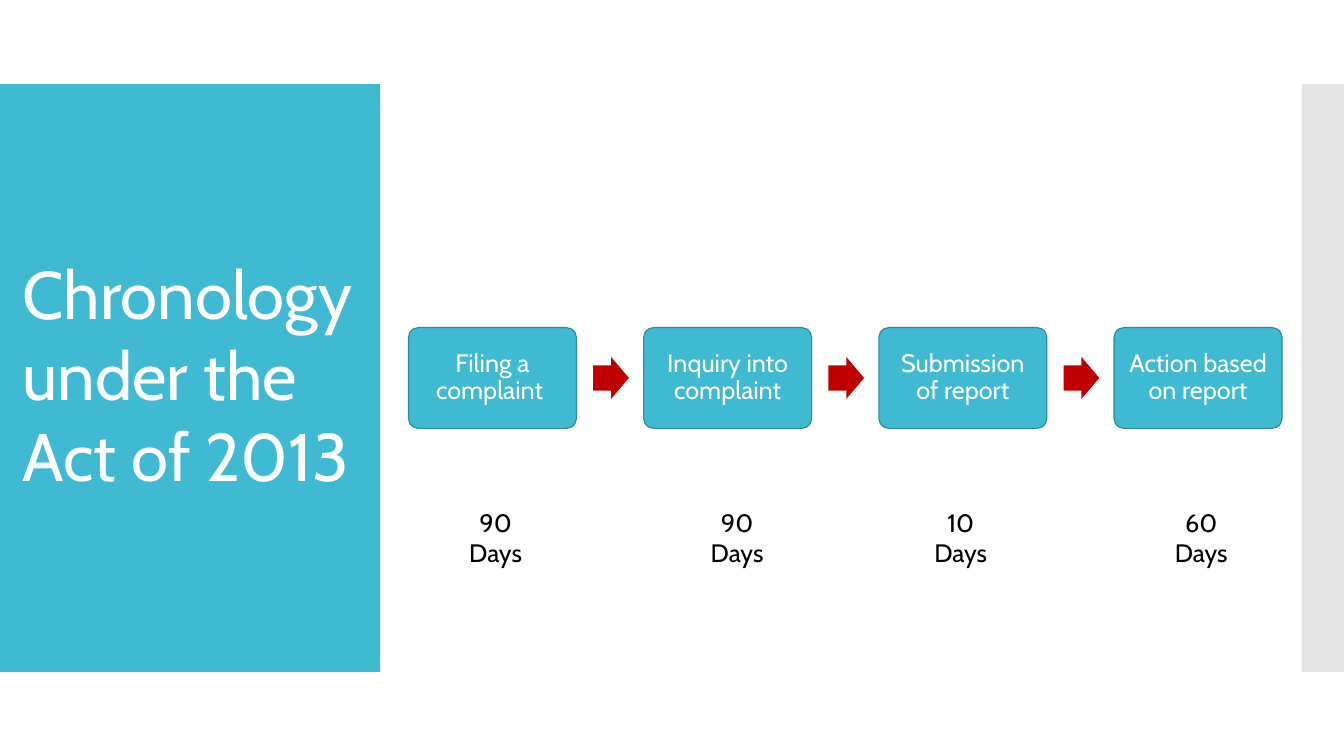
from dataclasses import dataclass

from lxml import etree
from pptx import Presentation
from pptx.dml.color import RGBColor
from pptx.enum.shapes import MSO_SHAPE
from pptx.enum.text import MSO_ANCHOR, MSO_AUTO_SIZE, PP_ALIGN
from pptx.oxml.ns import qn
from pptx.util import Pt

RECT = MSO_SHAPE.RECTANGLE
ROUND = MSO_SHAPE.ROUNDED_RECTANGLE
ARROW = MSO_SHAPE.RIGHT_ARROW
MIDDLE = MSO_ANCHOR.MIDDLE
GROW = MSO_AUTO_SIZE.SHAPE_TO_FIT_TEXT
LEFT = PP_ALIGN.LEFT
CENTER = PP_ALIGN.CENTER
PX = 9525


@dataclass(frozen=True)
class Theme:
    font: str = "Cabin"
    teal: str = "40BAD2"
    rim: str = "2F8A9B"
    red: str = "C00000"
    gray: str = "C8C8C8"
    white: str = "FFFFFF"
    black: str = "000000"
    title: int = 48
    body: int = 18
    line: float = 0.85


THEME = Theme()
STEPS = ["Filing a complaint ", "Inquiry into complaint",
         "Submission of report", "Action based on report"]
DAYS = [(47, "90"), (277, "90"), (490, "10"), (719, "60")]


def color(text):
    return RGBColor.from_string(text)


def scale(box):
    return [n * PX for n in box]


def add_block(slide, kind, box, fill, rim=None):
    shape = slide.shapes.add_shape(kind, *scale(box))
    shape.shadow.inherit = False
    shape.fill.solid()
    shape.fill.fore_color.rgb = color(fill)
    if rim:
        shape.line.color.rgb = color(rim)
        shape.line.width = Pt(THEME.line)
    else:
        shape.line.fill.background()
    return shape


def style(frame, size, tint, align, space=None):
    for para in frame.paragraphs:
        para.alignment = align
        para.line_spacing = space
        for run in para.runs:
            run.font.name = THEME.font
            run.font.size = Pt(size)
            run.font.color.rgb = color(tint)


def add_label(slide, box, text, size, tint, align):
    frame = slide.shapes.add_textbox(*scale(box)).text_frame
    frame.text = text
    frame.word_wrap = False
    frame.auto_size = GROW
    style(frame, size, tint, align)


def add_panel(slide, box):
    x, y, w, h = box
    add_block(slide, RECT, box, THEME.teal)
    add_label(slide, (x + 12, y + 156, w - 17, 242),
              "Chronology\nunder the\nAct of 2013",
              THEME.title, THEME.white, LEFT)


def add_edge(slide, box):
    edge = add_block(slide, RECT, box, THEME.gray)
    tint = edge.fill._xPr.find(qn("a:solidFill"))[0]
    etree.SubElement(tint, qn("a:alpha")).set("val", "50000")


def add_step(slide, box, text):
    step = add_block(slide, ROUND, box, THEME.teal, THEME.rim)
    step.adjustments[0] = 0.1
    frame = step.text_frame
    frame.text = text
    frame.word_wrap = True
    frame.vertical_anchor = MIDDLE
    frame.margin_left = frame.margin_right = 7 * PX
    frame.margin_top = frame.margin_bottom = 7 * PX
    style(frame, THEME.body, THEME.white, CENTER, 0.9)


def add_flow(slide, box):
    x, y, w, h = box
    wide, gap = 160, 64
    for i, text in enumerate(STEPS):
        left = x + i * (wide + gap)
        add_step(slide, (left, y, wide, h), text)
        if i < len(STEPS) - 1:
            arrow = add_block(slide, ARROW,
                              (left + wide + 16, y + 28, 34, 40), THEME.red)
            arrow.adjustments[0] = 0.6
            arrow.adjustments[1] = 0.5


def add_days(slide, box):
    x, y, w, h = box
    for left, count in DAYS:
        add_label(slide, (x + left, y, 72, h), f"{count}\nDays",
                  THEME.body, THEME.black, CENTER)


def main():
    deck = Presentation()
    deck.slide_width, deck.slide_height = scale((1280, 720))
    slide = deck.slides.add_slide(deck.slide_layouts[6])
    add_panel(slide, (0, 80, 362, 560))
    add_edge(slide, (1240, 80, 40, 560))
    add_flow(slide, (389, 312, 832, 96))
    add_days(slide, (389, 478, 832, 68))
    deck.save("out.pptx")


if __name__ == "__main__":
    main()
